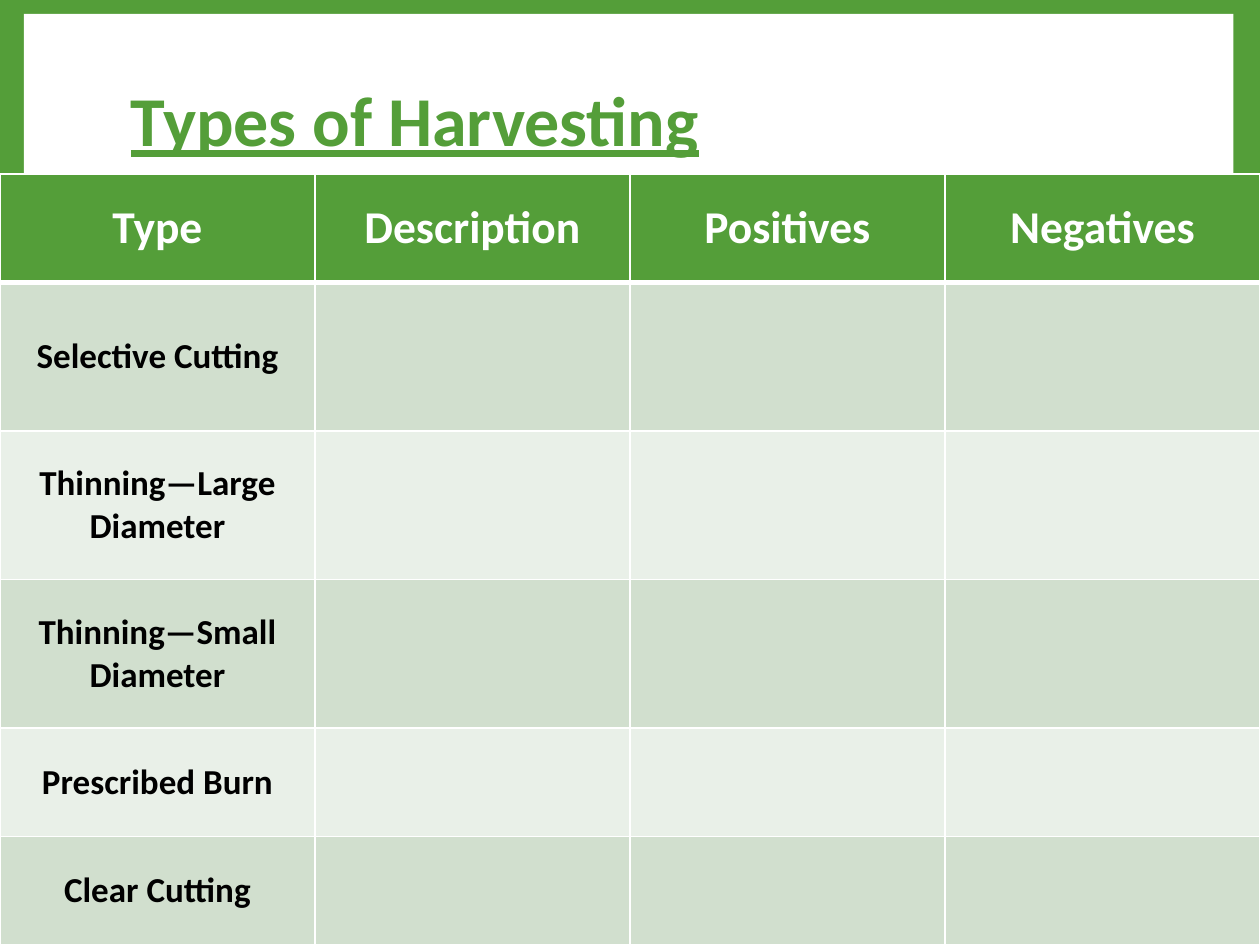
from lxml.etree import SubElement
from pptx import Presentation
from pptx.dml.color import RGBColor
from pptx.enum.shapes import MSO_SHAPE
from pptx.enum.text import MSO_ANCHOR, PP_ALIGN
from pptx.oxml.ns import qn
from pptx.util import Inches, Pt

COLORS = {
    "green": "549E39",
    "white": "FFFFFF",
    "black": "000000",
    "band_dark": "D1DFCE",
    "band_light": "E9F0E8",
}


def write_text(frame, text, size, color, align=PP_ALIGN.LEFT, underline=False, spacing=1.0):
    paragraph = frame.paragraphs[0]
    paragraph.alignment = align
    paragraph.line_spacing = spacing
    run = paragraph.add_run()
    run.text = text
    run.font.name = "Calibri"
    run.font.size = Pt(size)
    run.font.bold = True
    run.font.underline = underline
    run.font.color.rgb = RGBColor.from_string(COLORS[color])


def set_borders(cell, **widths):
    properties = cell._tc.get_or_add_tcPr()
    for side in ("L", "R", "T", "B"):
        line = SubElement(properties, qn(f"a:ln{side}"), w=str(Pt(widths.get(side, 1))))
        fill = SubElement(line, qn("a:solidFill"))
        SubElement(fill, qn("a:srgbClr"), val=COLORS["white"])


presentation = Presentation()
presentation.slide_width = Inches(10)
presentation.slide_height = Inches(7.5)
slide = presentation.slides.add_slide(presentation.slide_layouts[6])

# Green background with a white panel
slide.background.fill.solid()
slide.background.fill.fore_color.rgb = RGBColor.from_string(COLORS["green"])
panel = slide.shapes.add_shape(
    MSO_SHAPE.RECTANGLE, Inches(0.19), Inches(0.11), Inches(9.6), Inches(7.1))
panel.shadow.inherit = False
panel.fill.solid()
panel.fill.fore_color.rgb = RGBColor.from_string(COLORS["white"])
panel.line.fill.background()

# Title
title = slide.shapes.add_textbox(Inches(0.94), Inches(0.24), Inches(8.1), Inches(1.48))
title.text_frame.word_wrap = True
title.text_frame.vertical_anchor = MSO_ANCHOR.MIDDLE
write_text(title.text_frame, "Types of Harvesting", size=40, color="green",
           underline=True, spacing=0.9)

# Harvesting table: only the first column is filled in below the header
headers = ["Type", "Description", "Positives", "Negatives"]
harvest_types = [
    "Selective Cutting",
    "Thinning—Large Diameter",
    "Thinning—Small Diameter",
    "Prescribed Burn",
    "Clear Cutting",
]
row_heights = [0.86, 1.18, 1.18, 1.18, 0.86, 0.86]
rows = [headers] + [[name, "", "", ""] for name in harvest_types]

table = slide.shapes.add_table(
    len(rows), len(headers), Inches(0), Inches(1.38), Inches(10), Inches(6.12)).table
for column in table.columns:
    column.width = Inches(2.5)

for row_index, (texts, height) in enumerate(zip(rows, row_heights)):
    table.rows[row_index].height = Inches(height)
    is_header = row_index == 0
    if is_header:
        fill_color = "green"
    else:
        fill_color = "band_dark" if row_index % 2 else "band_light"
    for column_index, text in enumerate(texts):
        cell = table.cell(row_index, column_index)
        cell.vertical_anchor = MSO_ANCHOR.MIDDLE
        set_borders(cell, T=3 if row_index == 1 else 1, B=3 if is_header else 1)
        cell.fill.solid()
        cell.fill.fore_color.rgb = RGBColor.from_string(COLORS[fill_color])
        if text:
            write_text(cell.text_frame, text, size=26 if is_header else 20,
                       color="white" if is_header else "black", align=PP_ALIGN.CENTER)

presentation.save("out.pptx")
